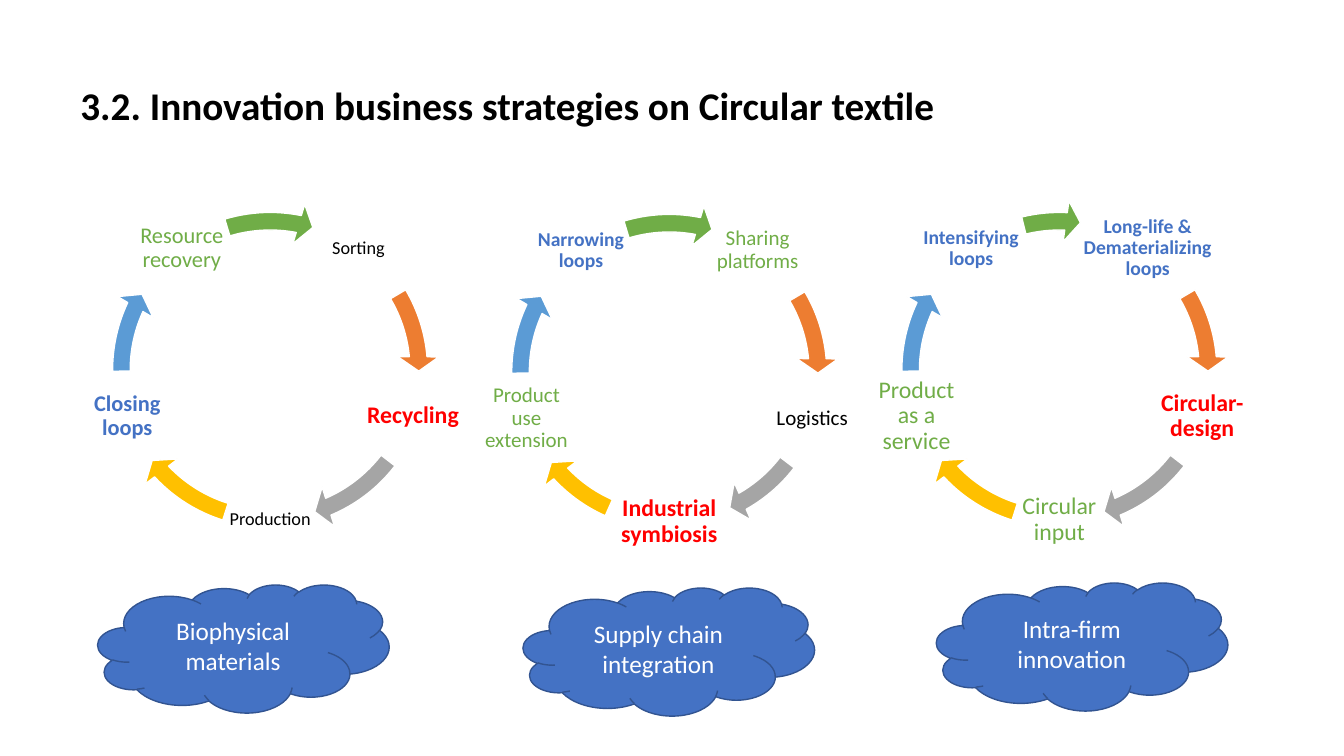
from math import cos, radians, sin

from pptx import Presentation
from pptx.dml.color import RGBColor
from pptx.enum.shapes import MSO_SHAPE
from pptx.enum.text import MSO_ANCHOR, PP_ALIGN
from pptx.util import Inches, Pt

CELL = Inches(0.1)
COLS, ROWS = 133.33, 75
RING = 33.6
RADIUS = 14.9
LABEL = 9
COLORS = {
    "black": "000000", "white": "FFFFFF", "red": "FF0000",
    "blue": "4472C4", "navy": "325491", "sky": "5B9BD5",
    "green": "70AD47", "orange": "ED7D31", "gray": "A5A5A5",
    "gold": "FFC000",
}
ARCS = [
    ("orange", 329.42, 354.91),
    ("gray", 37.53, 66.94),
    ("gold", 107.47, 136.88),
    ("sky", 179.5, 204.99),
    ("green", 253.29, 281.12),
]
LOOPS = [
    (26.8, 36.7, {}, [
        ("Sorting", 13, "black", False, LABEL),
        ("Recycling", 17, "red", True, 12.3),
        ("Production", 13, "black", False, LABEL),
        ("Closing loops", 16, "blue", True, LABEL),
        ("Resource recovery", 16, "green", False, LABEL),
    ]),
    (66.4, 36.9, {"gray": (37.53, 60.44), "gold": (113.97, 136.88)}, [
        ("Sharing platforms", 15, "green", False, LABEL),
        ("Logistics", 15, "black", False, LABEL),
        ("Industrial symbiosis", 17, "red", True, 12.1),
        ("Product use extension", 15, "green", False, LABEL),
        ("Narrowing loops", 14, "blue", True, LABEL),
    ]),
    (105.1, 36.7, {"green": (256.15, 272.56)}, [
        ("Long-life & Dematerializing loops", 14, "blue", True, 13.3),
        ("Circular-design", 17, "red", True, LABEL),
        ("Circular input", 17, "green", False, LABEL),
        ("Product as a service", 17, "green", False, LABEL),
        ("Intensifying loops", 14, "blue", True, 10.4),
    ]),
]
CLOUDS = [
    (9.7, 58, "Biophysical materials"),
    (51.9, 58.3, "Supply chain integration"),
    (92.9, 57.8, "Intra-firm innovation"),
]


def color(name):
    return RGBColor.from_string(COLORS[name])


def cells(*counts):
    return [int(count * CELL) for count in counts]


def write(shape, text, size, tint, bold=False, align=PP_ALIGN.CENTER, gap=0.9):
    frame = shape.text_frame
    frame.word_wrap = True
    frame.vertical_anchor = MSO_ANCHOR.MIDDLE
    par = frame.paragraphs[0]
    par.text = text
    par.alignment = align
    par.line_spacing = gap
    font = par.font
    font.name = "Calibri"
    font.size = Pt(size)
    font.bold = bold
    font.color.rgb = color(tint)


def paint(shape, fill, line):
    shape.shadow.inherit = False
    shape.fill.solid()
    shape.fill.fore_color.rgb = color(fill)
    shape.line.color.rgb = color(line)
    shape.line.width = Pt(1)


def add_title(slide, text):
    box = slide.shapes.add_textbox(*cells(7, 6.5, 88.6, 8.4))
    write(box, text, 28, "black", True, PP_ALIGN.LEFT)


def add_label(slide, x, y, text, size, tint, bold, width):
    box = slide.shapes.add_textbox(
        *cells(x - width / 2, y - LABEL / 2, width, LABEL))
    write(box, text, size, tint, bold)
    frame = box.text_frame
    frame.margin_left = frame.margin_right = Inches(0.02)
    frame.margin_top = frame.margin_bottom = Inches(0.02)


def add_arc(slide, x, y, fill, start, end):
    arc = slide.shapes.add_shape(
        MSO_SHAPE.CIRCULAR_ARROW,
        *cells(x - RING / 2, y - RING / 2, RING, RING))
    values = (0.052, 5.59 * 0.6, end * 0.6, start * 0.6, 0.061)
    for index, value in enumerate(values):
        arc.adjustments[index] = value
    paint(arc, fill, "white")


def add_loop(slide, x, y, changes, labels):
    for step, (label, arc) in enumerate(zip(labels, ARCS)):
        angle = radians(72 * step - 54)
        add_label(slide, x + RADIUS * cos(angle),
                  y + RADIUS * sin(angle), *label)
        fill, *span = arc
        add_arc(slide, x, y, fill, *changes.get(fill, span))


def add_cloud(slide, x, y, text):
    cloud = slide.shapes.add_shape(MSO_SHAPE.CLOUD, *cells(x, y, 28.9, 12.7))
    paint(cloud, "blue", "navy")
    write(cloud, text, 18, "white", gap=1.0)


def main():
    deck = Presentation()
    deck.slide_width, deck.slide_height = cells(COLS, ROWS)
    slide = deck.slides.add_slide(deck.slide_layouts[6])
    add_title(slide, "3.2. Innovation business strategies on Circular textile")
    for loop in LOOPS:
        add_loop(slide, *loop)
    for cloud in CLOUDS:
        add_cloud(slide, *cloud)
    deck.save("out.pptx")


if __name__ == "__main__":
    main()
